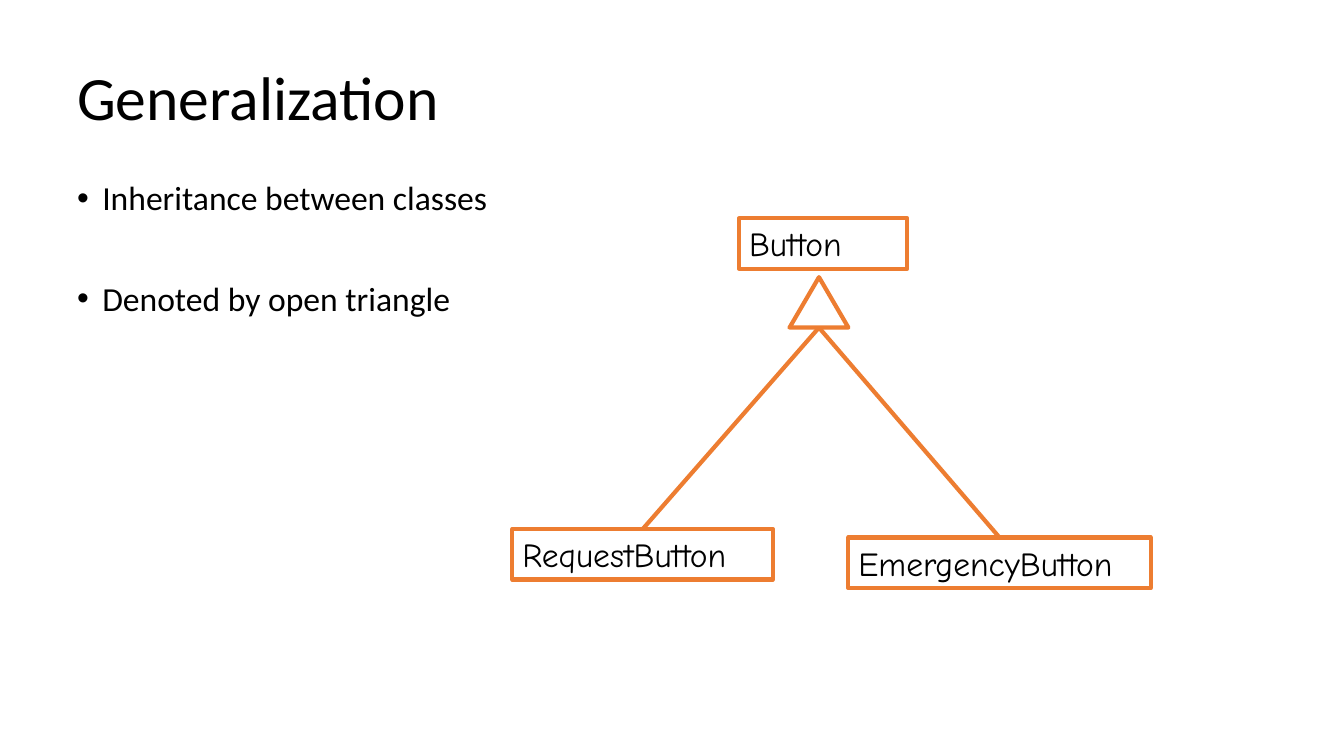
from lxml import etree
from pptx import Presentation
from pptx.dml.color import RGBColor
from pptx.enum.shapes import MSO_CONNECTOR, MSO_SHAPE
from pptx.enum.text import MSO_ANCHOR, PP_ALIGN
from pptx.oxml.ns import qn
from pptx.util import Pt

STRAIGHT = MSO_CONNECTOR.STRAIGHT
RECTANGLE = MSO_SHAPE.RECTANGLE
TRIANGLE = MSO_SHAPE.ISOSCELES_TRIANGLE
TOP, MIDDLE = MSO_ANCHOR.TOP, MSO_ANCHOR.MIDDLE
LEFT = PP_ALIGN.LEFT

BLACK, ORANGE = "000000", "ED7D31"
BODY_FONT, CLASS_FONT = "Calibri", "Comic Neue"
LINE_WIDTH = 3
BOX_HEIGHT = 36


def color(value):
    """Turn a hex string into a colour."""
    return RGBColor.from_string(value)


def set_attrs(obj, values):
    """Set each attribute of an object from a dict."""
    for name, value in values.items():
        setattr(obj, name, value)


def write(tf, lines, size, font, anchor=TOP, **para):
    """Write lines as paragraphs in one format and return the paragraphs."""
    set_attrs(tf, {"word_wrap": True, "vertical_anchor": anchor})
    for i, line in enumerate(lines):
        p = tf.add_paragraph() if i else tf.paragraphs[0]
        set_attrs(p, {"alignment": LEFT, **para})
        r = p.add_run()
        r.text = line
        set_attrs(r.font, {"size": Pt(size), "name": font})
        r.font.color.rgb = color(BLACK)
    return tf.paragraphs


def add_text(s, box, lines, size, **fmt):
    """Add a text box and return its paragraphs."""
    sp = s.shapes.add_textbox(*map(Pt, box))
    return write(sp.text_frame, lines, size, BODY_FONT, line_spacing=0.9, **fmt)


def add_bullet(p, indent):
    """Give a paragraph a hanging bullet."""
    pPr = p._p.get_or_add_pPr()
    pPr.set("marL", str(Pt(indent)))
    pPr.set("indent", str(-Pt(indent)))
    etree.SubElement(pPr, qn("a:buFont"), typeface="Arial")
    etree.SubElement(pPr, qn("a:buChar"), char="•")


def set_outline(line):
    """Apply the diagram's line style."""
    line.color.rgb = color(ORANGE)
    line.width = Pt(LINE_WIDTH)


def add_outline(s, kind, box):
    """Add an unfilled outlined shape."""
    sp = s.shapes.add_shape(kind, *map(Pt, box))
    sp.shadow.inherit = False
    sp.fill.background()
    set_outline(sp.line)
    return sp


def add_class(s, name, left, top, width):
    """Add a class box with its name."""
    sp = add_outline(s, RECTANGLE, (left, top, width, BOX_HEIGHT))
    write(sp.text_frame, [name], 24, CLASS_FONT)
    return sp


def add_branch(s, triangle, child):
    """Join the middle of the triangle's base to the top of a class box."""
    x = triangle.left + triangle.width // 2
    y = triangle.top + triangle.height
    c = s.shapes.add_connector(STRAIGHT, x, y, x, y)
    c.end_connect(child, 0)
    set_outline(c.line)
    etree.SubElement(c._element.spPr, qn("a:effectLst"))


def main():
    """Build the generalization slide."""
    prs = Presentation()
    set_attrs(prs, {"slide_width": Pt(960), "slide_height": Pt(540)})
    s = prs.slides.add_slide(prs.slide_layouts[6])

    add_text(s, (48, 36, 848, 72), ["Generalization"], 44, anchor=MIDDLE)
    points = ["Inheritance between classes", "Denoted by open triangle"]
    for p in add_text(s, (48, 126, 428, 348), points, 24, space_after=Pt(46)):
        add_bullet(p, 18)

    add_class(s, "Button", 528, 156, 120)
    children = [
        add_class(s, "RequestButton", 366, 378, 186),
        add_class(s, "EmergencyButton", 606, 384, 216),
    ]
    triangle = add_outline(s, TRIANGLE, (564, 198, 42, 36))
    for child in children:
        add_branch(s, triangle, child)

    prs.save("out.pptx")


if __name__ == "__main__":
    main()
